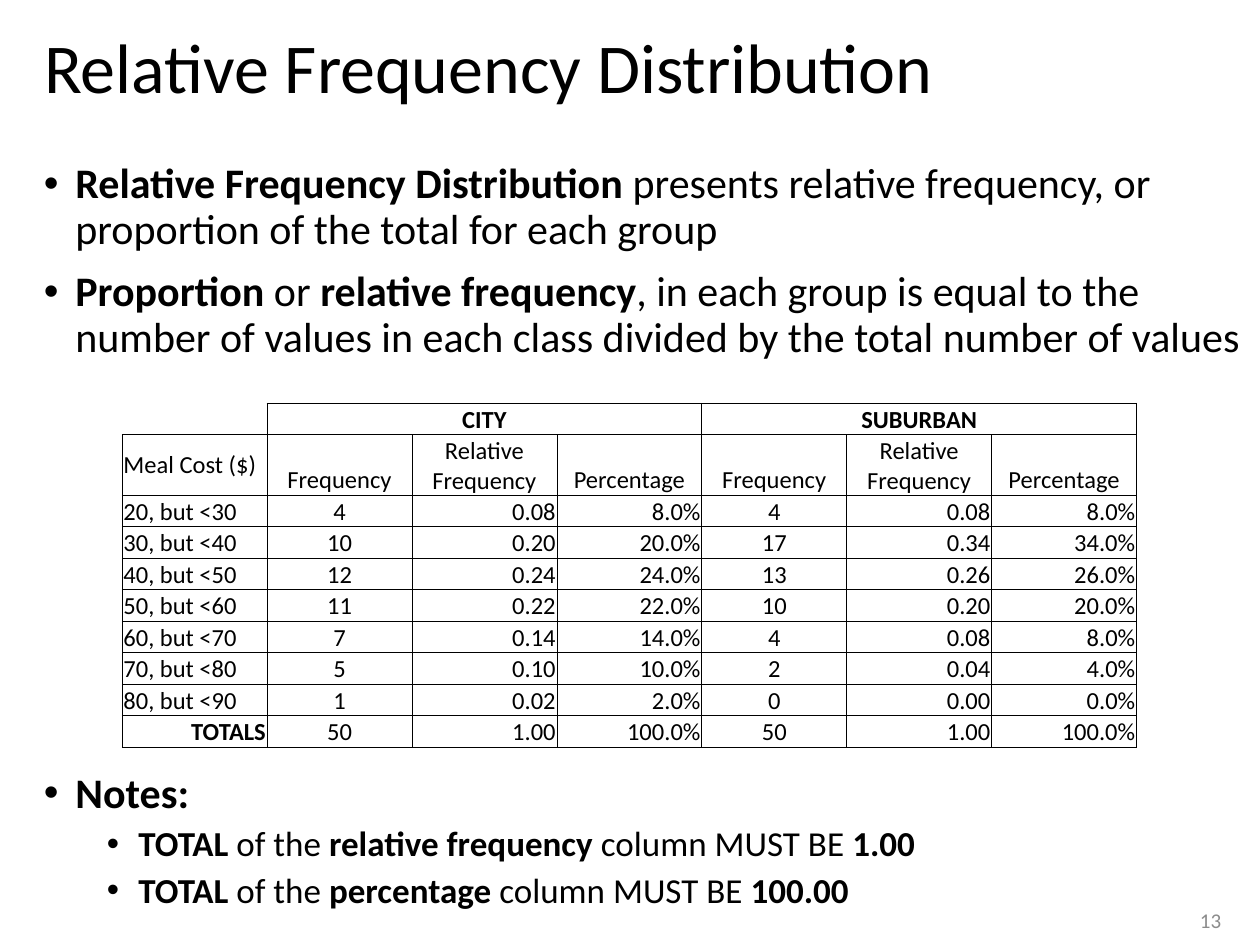
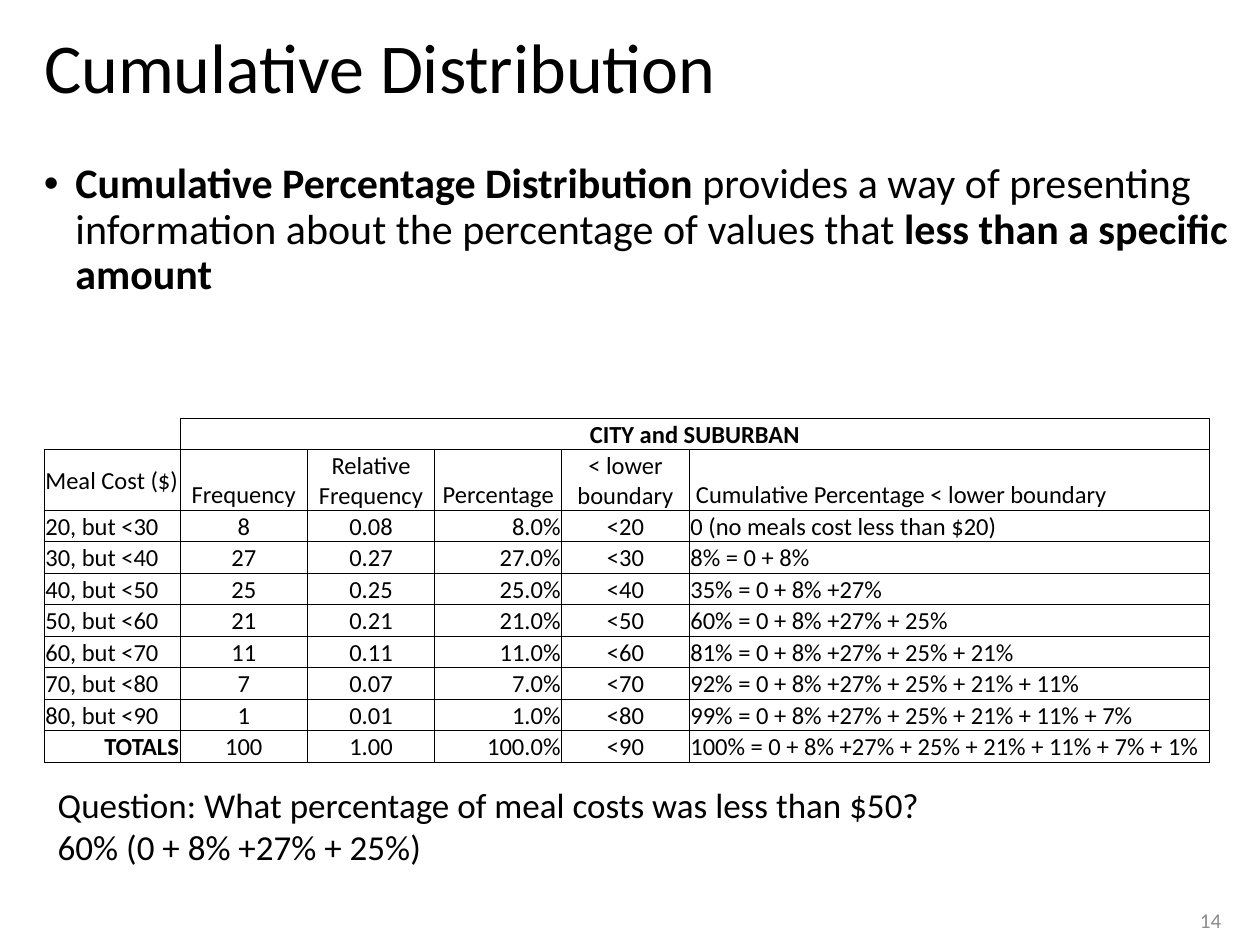
from itertools import accumulate

from lxml.etree import SubElement
from pptx import Presentation
from pptx.dml.color import RGBColor
from pptx.enum.text import MSO_ANCHOR, PP_ALIGN
from pptx.oxml.ns import qn
from pptx.util import Inches, Pt

FONT = "Calibri"
BLACK = "000000"
GREY = "8C8C8C"
ALIGN = {"l": PP_ALIGN.LEFT, "c": PP_ALIGN.CENTER, "r": PP_ALIGN.RIGHT}

CITY = [4, 10, 12, 11, 7, 5, 1]
SUBURB = [4, 17, 13, 10, 4, 2, 0]
LOWS = range(20, 90, 10)
LABELS = [f"{low}, but <{low + 10}" for low in LOWS] + ["*TOTALS*"]
HEADS = ["Frequency", "Relative Frequency", "Percentage"]


def color(code):
    return RGBColor.from_string(code)


def assign(item, values):
    for name, value in values.items():
        setattr(item, name, value)


def shares(counts):
    """Rows of count, proportion and percentage, closed by the totals."""
    total = sum(counts)
    return [[str(n), f"{n / total:.2f}", f"{n / total:.1%}"]
            for n in counts + [total]]


class Deck:
    def __init__(self):
        self.prs = Presentation()
        assign(self.prs, {"slide_width": Inches(10), "slide_height": Inches(7.5)})
        self.slide = None

    def start(self, title, number):
        """Add a slide with its title and slide number."""
        self.slide = self.prs.slides.add_slide(self.prs.slide_layouts[5])
        shape = self.slide.shapes.title
        assign(shape, {"left": Inches(0.25), "top": Inches(0),
                       "width": Inches(9.53), "height": Inches(1.13)})
        frame = shape.text_frame
        assign(frame, {"word_wrap": True, "vertical_anchor": MSO_ANCHOR.MIDDLE})
        para = frame.paragraphs[0]
        assign(para, {"alignment": ALIGN["l"], "line_spacing": 0.9})
        self.runs(para, title, 40)
        self.text([str(number)], (7.54, 7.1, 2.25, 0.4), 12, GREY, "r",
                  MSO_ANCHOR.MIDDLE)

    def runs(self, para, text, size, code=BLACK):
        """Fill a paragraph; words between asterisks are bold."""
        for pos, part in enumerate(text.split("*")):
            if part:
                run = para.add_run()
                run.text = part
                assign(run.font, {"name": FONT, "size": Pt(size),
                                  "bold": pos % 2 == 1})
                run.font.color.rgb = color(code)

    def frame(self, box, anchor=MSO_ANCHOR.TOP):
        frame = self.slide.shapes.add_textbox(*map(Inches, box)).text_frame
        assign(frame, {"word_wrap": True, "vertical_anchor": anchor})
        return frame

    def lines(self, frame, texts):
        """Yield a paragraph of the frame for each text."""
        for pos, text in enumerate(texts):
            yield frame.add_paragraph() if pos else frame.paragraphs[0], text

    def text(self, texts, box, size, code=BLACK, align="l",
             anchor=MSO_ANCHOR.TOP):
        for para, text in self.lines(self.frame(box, anchor), texts):
            para.alignment = ALIGN[align]
            self.runs(para, text, size, code)

    def bullets(self, items, top):
        """Add a bullet list from pairs of level and text."""
        frame = self.frame((0.25, top, 9.75, 1.86))
        for para, (level, text) in self.lines(frame, items):
            assign(para, {"level": level, "line_spacing": 0.9,
                          "space_before": Pt(5 if level else 10)})
            props = para._p.get_or_add_pPr()
            props.set("marL", str(Inches(0.25 + 0.5 * level)))
            props.set("indent", str(Inches(-0.25)))
            SubElement(props, qn("a:buFont"), typeface="Arial")
            SubElement(props, qn("a:buChar"), char="•")
            self.runs(para, text, 20 if level else 24)

    def border(self, cell, sides):
        props = cell._tc.get_or_add_tcPr()
        for side in sides:
            line = SubElement(props, qn(f"a:ln{side}"), w=str(Pt(0.5)))
            fill = SubElement(line, qn("a:solidFill"))
            SubElement(fill, qn("a:srgbClr"), val=BLACK)

    def cell(self, cell, text, align, anchor, sides):
        self.border(cell, sides)
        cell.fill.background()
        edge = Inches(0.01)
        assign(cell, {"margin_left": edge, "margin_right": edge,
                      "margin_top": edge, "margin_bottom": 0,
                      "vertical_anchor": anchor})
        para = cell.text_frame.paragraphs[0]
        para.alignment = ALIGN[align]
        self.runs(para, text, 14)
        if not text:
            SubElement(para._p, qn("a:endParaRPr"), sz="1400")

    def table(self, rows, spot, widths, aligns, span):
        """Add a table whose first row holds group names over span columns."""
        heights = [0.25, 0.48] + [0.25] * (len(rows) - 2)
        size = (sum(widths), sum(heights))
        grid = self.slide.shapes.add_table(
            len(rows), len(widths), *map(Inches, spot + size)).table
        assign(grid, {"first_row": False, "horz_banding": False})
        for col, width in zip(grid.columns, widths):
            col.width = Inches(width)
        for row, height in zip(grid.rows, heights):
            row.height = Inches(height)
        for r, row in enumerate(rows):
            for c, text in enumerate(row):
                align = aligns[c]
                if r == 0 or (r == 1 and align == "r"):
                    align = "c"
                if text == LABELS[-1]:
                    align = "r"
                middle = r == 1 and c == 0
                anchor = MSO_ANCHOR.MIDDLE if middle else MSO_ANCHOR.BOTTOM
                self.cell(grid.cell(r, c), text, align, anchor,
                          "LRTB" if r or c else "RB")
        for c in range(1, len(widths), span):
            grid.cell(0, c).merge(grid.cell(0, c + span - 1))


def relative(deck):
    deck.start("Relative Frequency Distribution", 13)
    deck.bullets([
        (0, "*Relative Frequency Distribution *presents relative frequency, "
            "or proportion of the total for each group"),
        (0, "*Proportion *or *relative frequency*, in each group is equal to "
            "the number of values in each class divided by the total number "
            "of values"),
    ], 1.24)
    rows = [["", "*CITY*", "", "", "*SUBURBAN*", "", ""],
            ["Meal Cost ($)"] + HEADS * 2]
    rows += [[label] + city + suburb for label, city, suburb
             in zip(LABELS, shares(CITY), shares(SUBURB))]
    deck.table(rows, (0.97, 3.2), [1.15] * 7, "lcrrcrr", 3)
    deck.bullets([
        (0, "*Notes:*"),
        (1, "*TOTAL *of the *relative frequency *column MUST BE *1.00*"),
        (1, "*TOTAL *of the *percentage *column MUST BE *100.00*"),
    ], 6.08)


def cumulative(deck):
    deck.start("Cumulative Distribution", 14)
    deck.bullets([
        (0, "*Cumulative Percentage Distribution *provides a way of "
            "presenting information about the percentage of values that "
            "*less than a specific amount*"),
    ], 1.24)
    counts = [a + b for a, b in zip(CITY, SUBURB)]
    terms = ["0", " + 8%", " +27%", " + 25%", " + 21%", " + 11%", " + 7%", " + 1%"]
    sums = list(accumulate(terms))
    totals = accumulate(counts)
    notes = ["0 (no meals cost less than $20)"]
    notes += [f"{total}% = {chain}" for total, chain in zip(totals, sums[1:])]
    bounds = [f"<{low}" for low in range(20, 100, 10)]
    rows = [["", "*CITY and SUBURBAN*", "", "", "", ""],
            ["Meal Cost ($)"] + HEADS
            + ["< lower boundary", " Cumulative Percentage < lower boundary"]]
    rows += [[label] + share + [bound, note] for label, share, bound, note
             in zip(LABELS, shares(counts), bounds, notes)]
    deck.table(rows, (0.35, 3.32), [1.08] + [1.01] * 4 + [4.13], "lccrcl", 5)
    deck.text(["Question: What percentage of meal costs was less than $50?",
               f"60% ({sums[3]})"], (0.36, 6.17, 9.25, 0.77), 20)


def main():
    deck = Deck()
    relative(deck)
    cumulative(deck)
    deck.prs.save("out.pptx")


if __name__ == "__main__":
    main()
